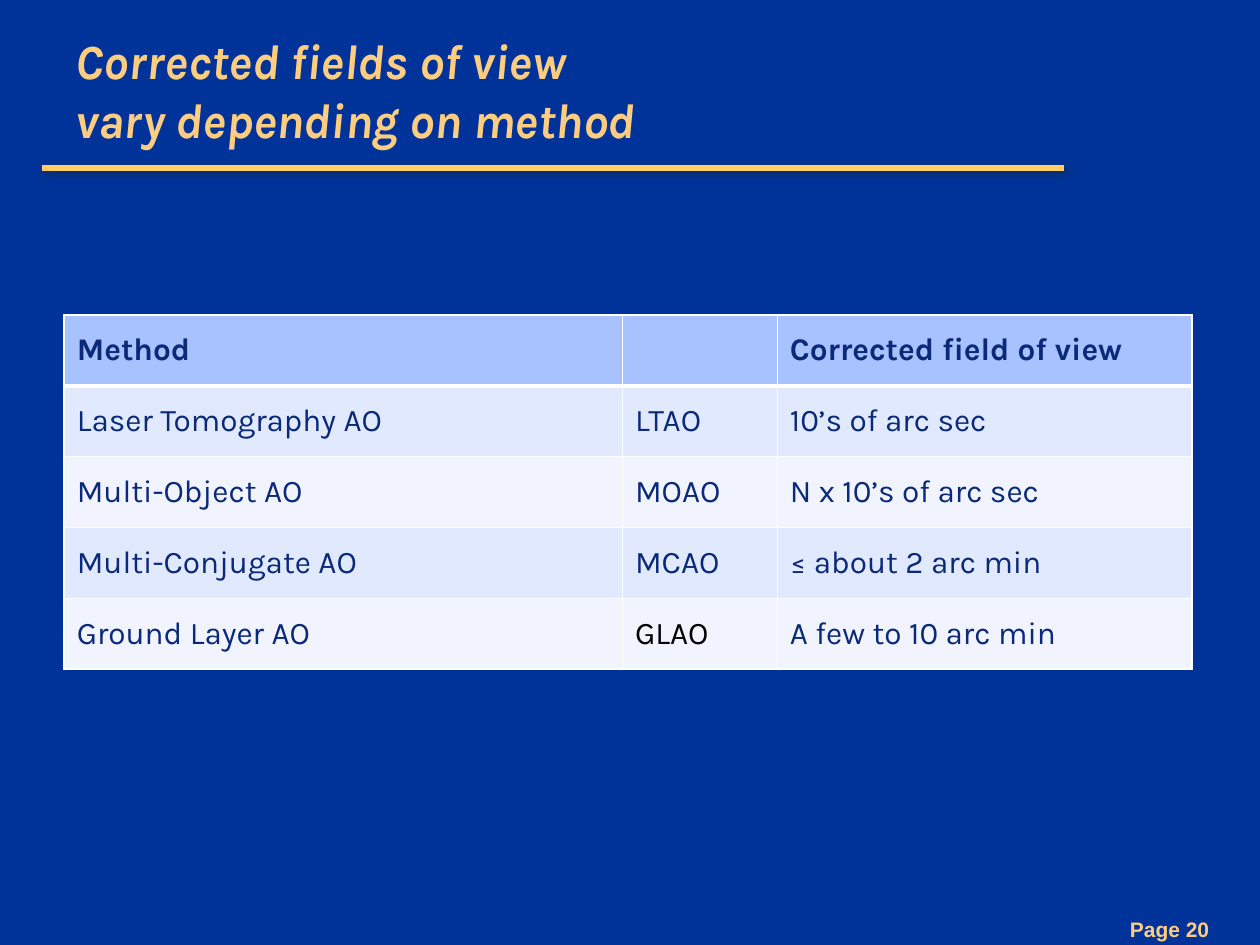
from dataclasses import dataclass

from lxml import etree
from pptx import Presentation
from pptx.dml.color import RGBColor
from pptx.enum.shapes import MSO_CONNECTOR
from pptx.enum.text import MSO_ANCHOR, PP_ALIGN
from pptx.oxml import parse_xml
from pptx.oxml.ns import nsdecls, qn
from pptx.util import Pt

STRAIGHT = MSO_CONNECTOR.STRAIGHT
TOP, MIDDLE = MSO_ANCHOR.TOP, MSO_ANCHOR.MIDDLE
LEFT, RIGHT = PP_ALIGN.LEFT, PP_ALIGN.RIGHT
BLANK_LAYOUT = 6


@dataclass(frozen=True)
class Theme:
    background: str = "003399"
    rule: str = "FFCC66"
    shadow: str = "232323"
    heading: str = "FFCD7F"
    table_text: str = "0A2979"
    accent_text: str = "000000"
    header_fill: str = "A8C2FF"
    band_fills: tuple = ("E1E9FF", "F1F4FF")
    border: str = "FFFFFF"
    font: str = "Karla"
    page_font: str = "Arial"
    title_size: int = 28
    table_size: int = 18
    page_size: int = 12


class SlideBuilder:
    def __init__(self, slide, theme):
        self.slide = slide
        self.theme = theme
        fill = slide.background.fill
        fill.solid()
        fill.fore_color.rgb = RGBColor.from_string(theme.background)

    def style(self, font, name, size, color, bold=False, italic=False):
        font.name, font.size = name, Pt(size)
        font.bold, font.italic = bold, italic
        font.color.rgb = RGBColor.from_string(color)

    def text(self, text, left, top, width, height, anchor=TOP, align=LEFT,
             margin_top=3.6, margin_right=7.2, **font_style):
        shape = self.slide.shapes.add_textbox(Pt(left), Pt(top), Pt(width), Pt(height))
        frame = shape.text_frame
        frame.word_wrap = True
        frame.vertical_anchor = anchor
        frame.margin_top, frame.margin_right = Pt(margin_top), Pt(margin_right)
        paragraph = frame.paragraphs[0]
        paragraph.text = text
        paragraph.alignment = align
        self.style(paragraph.font, **font_style)

    def rule(self, left, right, y, weight):
        """Draw a horizontal line with a soft shadow."""
        line = self.slide.shapes.add_connector(STRAIGHT, Pt(left), Pt(y), Pt(right), Pt(y))
        line.line.color.rgb = RGBColor.from_string(self.theme.rule)
        line.line.width = Pt(weight)
        line._element.spPr.append(parse_xml(
            f'<a:effectLst {nsdecls("a")}>'
            f'<a:outerShdw blurRad="{Pt(5)}" dist="{Pt(1.4)}" dir="2700000">'
            f'<a:srgbClr val="{self.theme.shadow}"><a:alpha val="75000"/></a:srgbClr>'
            '</a:outerShdw></a:effectLst>'))

    def borders(self, cell, top, bottom):
        properties = cell._tc.get_or_add_tcPr()
        for side, weight in (("L", 1), ("R", 1), ("T", top), ("B", bottom)):
            line = etree.SubElement(properties, qn(f"a:ln{side}"), w=str(Pt(weight)))
            fill = etree.SubElement(line, qn("a:solidFill"))
            etree.SubElement(fill, qn("a:srgbClr"), val=self.theme.border)

    def table(self, rows, left, top, column_widths, row_height, accents=()):
        """Draw a banded table with a header; accents lists words in the accent colour."""
        theme = self.theme
        table = self.slide.shapes.add_table(
            len(rows), len(column_widths), Pt(left), Pt(top),
            Pt(sum(column_widths)), Pt(row_height * len(rows))).table
        for column, width in zip(table.columns, column_widths):
            column.width = Pt(width)
        for row_index, values in enumerate(rows):
            header = row_index == 0
            band = theme.band_fills[(row_index - 1) % 2]
            for column_index, value in enumerate(values):
                cell = table.cell(row_index, column_index)
                self.borders(cell, top=3 if row_index == 1 else 1, bottom=3 if header else 1)
                cell.fill.solid()
                cell.fill.fore_color.rgb = RGBColor.from_string(
                    theme.header_fill if header else band)
                cell.vertical_anchor = MIDDLE
                paragraph = cell.text_frame.paragraphs[0]
                paragraph.text = value
                color = theme.accent_text if value in accents else theme.table_text
                self.style(paragraph.font, theme.font, theme.table_size, color, bold=header)


METHODS = [
    ("Method", "", "Corrected field of view"),
    ("Laser Tomography AO", "LTAO", "10’s of arc sec"),
    ("Multi-Object AO", "MOAO", "N x 10’s of arc sec"),
    ("Multi-Conjugate AO", "MCAO", "≤ about 2 arc min"),
    ("Ground Layer AO", "GLAO", "A few to 10 arc min"),
]


def main():
    presentation = Presentation()
    presentation.slide_width, presentation.slide_height = Pt(720), Pt(540)
    slide = presentation.slides.add_slide(presentation.slide_layouts[BLANK_LAYOUT])
    theme = Theme()
    builder = SlideBuilder(slide, theme)

    builder.rule(left=24, right=608, y=96, weight=3)
    builder.text("Page 20", 520, 506, 186.5, 31, align=RIGHT,
                 margin_top=18, margin_right=15.5, name=theme.page_font,
                 size=theme.page_size, color=theme.heading, bold=True)
    builder.text("Corrected fields of view \vvary depending on method", 36, 0, 564, 102,
                 anchor=MIDDLE, name=theme.font, size=theme.title_size,
                 color=theme.heading, bold=True, italic=True)
    builder.table(METHODS, left=36.7, top=180, column_widths=(319, 88.5, 237),
                  row_height=40.5, accents=("GLAO",))

    presentation.save("out.pptx")


if __name__ == "__main__":
    main()
